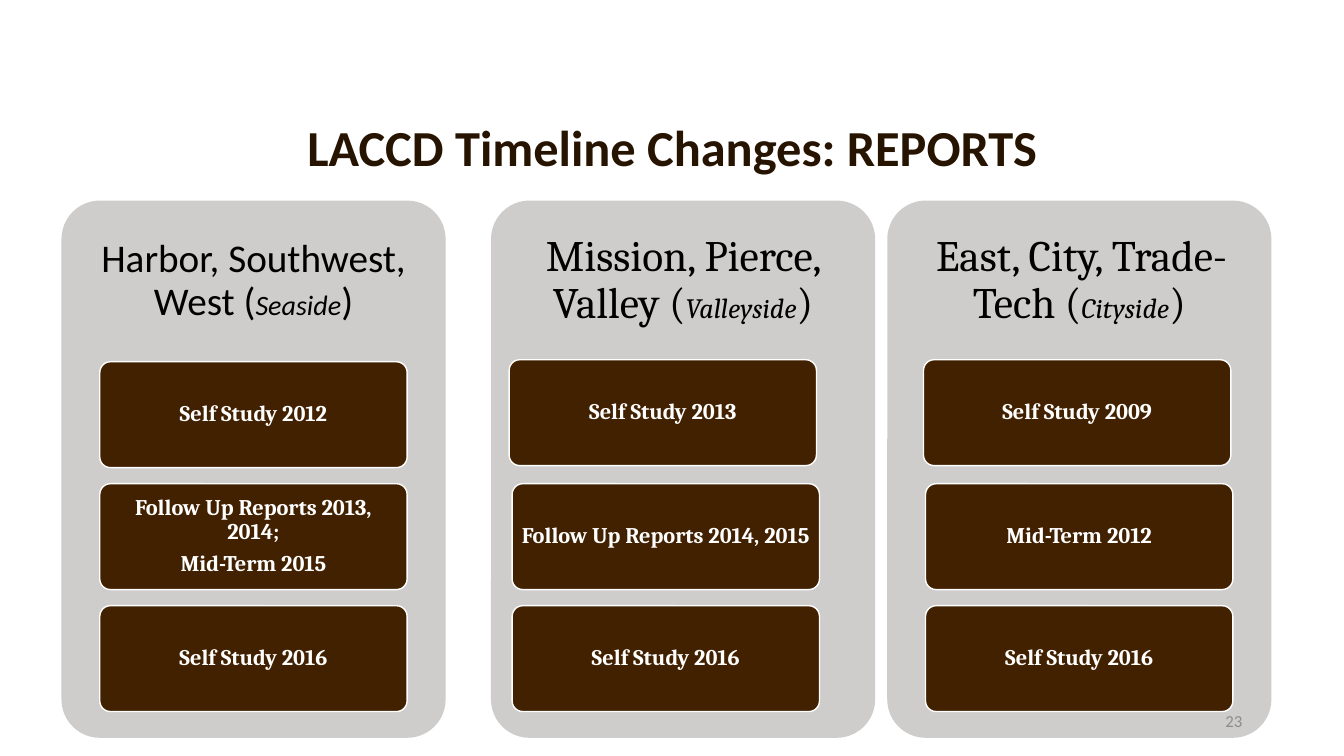
from dataclasses import dataclass

from pptx import Presentation
from pptx import util as u
from pptx.dml.color import RGBColor
from pptx.enum import shapes, text

# Content: left edge, heading (area, side), cards with left and top nudges
TITLE = "LACCD Timeline Changes: REPORTS"
PAGE = "23"
PANELS = [
    dict(left=0.61, font="Calibri", size=28, inset=0.12,
         head=("Harbor, Southwest, West (", "Seaside", ")"),
         cards=[(0.38, 0, ["Self Study 2012"]),
                (0.38, 0, ["Follow Up Reports 2013, 2014;", "Mid-Term 2015"]),
                (0.38, 0, ["Self Study 2016"])]),
    dict(left=4.87, font="Cambria", size=31, inset=0.13,
         head=("Mission, Pierce, Valley (", "Valleyside", ")"),
         cards=[(0.18, -0.02, ["Self Study 2013"]),
                (0.21, 0, ["Follow Up Reports 2014, 2015"]),
                (0.21, 0, ["Self Study 2016"])]),
    dict(left=8.8, font="Cambria", size=31, inset=0.13,
         head=("East, City, Trade-Tech (", "Cityside", ")"),
         cards=[(0.36, -0.02, ["Self Study 2009"]),
                (0.38, 0, ["Mid-Term 2012"]),
                (0.38, 0, ["Self Study 2016"])]),
]


@dataclass(frozen=True)
class Theme:
    title: str = "261300"
    panel: str = "CFCDCC"
    card: str = "422100"
    white: str = "FFFFFF"
    black: str = "000000"
    grey: str = "8C8C8C"
    sans: str = "Calibri"
    serif: str = "Cambria"
    title_size: int = 36
    side_size: int = 20
    card_size: int = 16
    page_size: int = 12


T = Theme()

# Grid, in inches
WIDE, HIGH = 13.33, 7.5
TOP = 1.99
PANEL_W, PANEL_H = 3.81, 5.33
HEAD_H = PANEL_H * 0.3
CARD_W, CARD_H = PANEL_W * 0.8, 1.05
FIRST, STEP = TOP + HEAD_H, 1.21


def box(*nums):
    return [u.Inches(n) for n in nums]


def add_run(para, words, font, size, color, bold=False, italic=False):
    run = para.add_run()
    run.text = words
    run.font.name = font
    run.font.size = u.Pt(size)
    run.font.color.rgb = RGBColor.from_string(color)
    run.font.bold = bold
    run.font.italic = italic


def set_frame(frame, side, ends):
    frame.word_wrap = True
    frame.auto_size = text.MSO_AUTO_SIZE.NONE
    frame.vertical_anchor = text.MSO_ANCHOR.MIDDLE
    frame.margin_left = frame.margin_right = u.Inches(side)
    frame.margin_top = frame.margin_bottom = u.Inches(ends)


def set_para(para, align=text.PP_ALIGN.CENTER, line=0.9):
    para.alignment = align
    para.line_spacing = line


def add_round(slide, place, fill, line=None):
    shape = slide.shapes.add_shape(
        shapes.MSO_SHAPE.ROUNDED_RECTANGLE, *box(*place))
    shape.adjustments[0] = 0.1
    shape.shadow.inherit = False
    shape.fill.solid()
    shape.fill.fore_color.rgb = RGBColor.from_string(fill)
    if line:
        shape.line.color.rgb = RGBColor.from_string(line)
        shape.line.width = u.Pt(1)
    else:
        shape.line.fill.background()
    return shape


def add_card(slide, left, top, lines):
    card = add_round(slide, (left, top, CARD_W, CARD_H), T.card, T.white)
    frame = card.text_frame
    set_frame(frame, 0.04, 0.03)
    for i, words in enumerate(lines):
        para = frame.add_paragraph() if i else frame.paragraphs[0]
        set_para(para)
        para.space_after = u.Pt(T.card_size * 0.35)
        add_run(para, words, T.serif, T.card_size, T.white, bold=True)


def add_panel(slide, panel):
    left = panel["left"]
    add_round(slide, (left, TOP, PANEL_W, PANEL_H), T.panel)

    # Heading
    head = slide.shapes.add_textbox(*box(left, TOP, PANEL_W, HEAD_H))
    set_frame(head.text_frame, panel["inset"], panel["inset"])
    para = head.text_frame.paragraphs[0]
    set_para(para)
    for i, words in enumerate(panel["head"]):
        side = i == 1
        size = T.side_size if side else panel["size"]
        add_run(para, words, panel["font"], size, T.black, italic=side)

    # Cards
    for row, (dx, dy, lines) in enumerate(panel["cards"]):
        add_card(slide, left + dx, FIRST + row * STEP + dy, lines)


def main():
    deck = Presentation()
    deck.slide_width, deck.slide_height = box(WIDE, HIGH)
    slide = deck.slides.add_slide(deck.slide_layouts[5])

    # Title
    title = slide.shapes.title
    title.left, title.top, title.width, title.height = box(0.92, 0.99, 11.5, 1)
    set_frame(title.text_frame, 0.1, 0.05)
    para = title.text_frame.paragraphs[0]
    set_para(para)
    add_run(para, TITLE, T.sans, T.title_size, T.title, bold=True)

    # Panels
    for panel in PANELS:
        add_panel(slide, panel)

    # Page number
    page = slide.shapes.add_textbox(*box(9.42, 6.95, 3, 0.4))
    set_frame(page.text_frame, 0.1, 0.05)
    para = page.text_frame.paragraphs[0]
    set_para(para, text.PP_ALIGN.RIGHT, 1.0)
    add_run(para, PAGE, T.sans, T.page_size, T.grey)

    deck.save("out.pptx")


if __name__ == "__main__":
    main()
